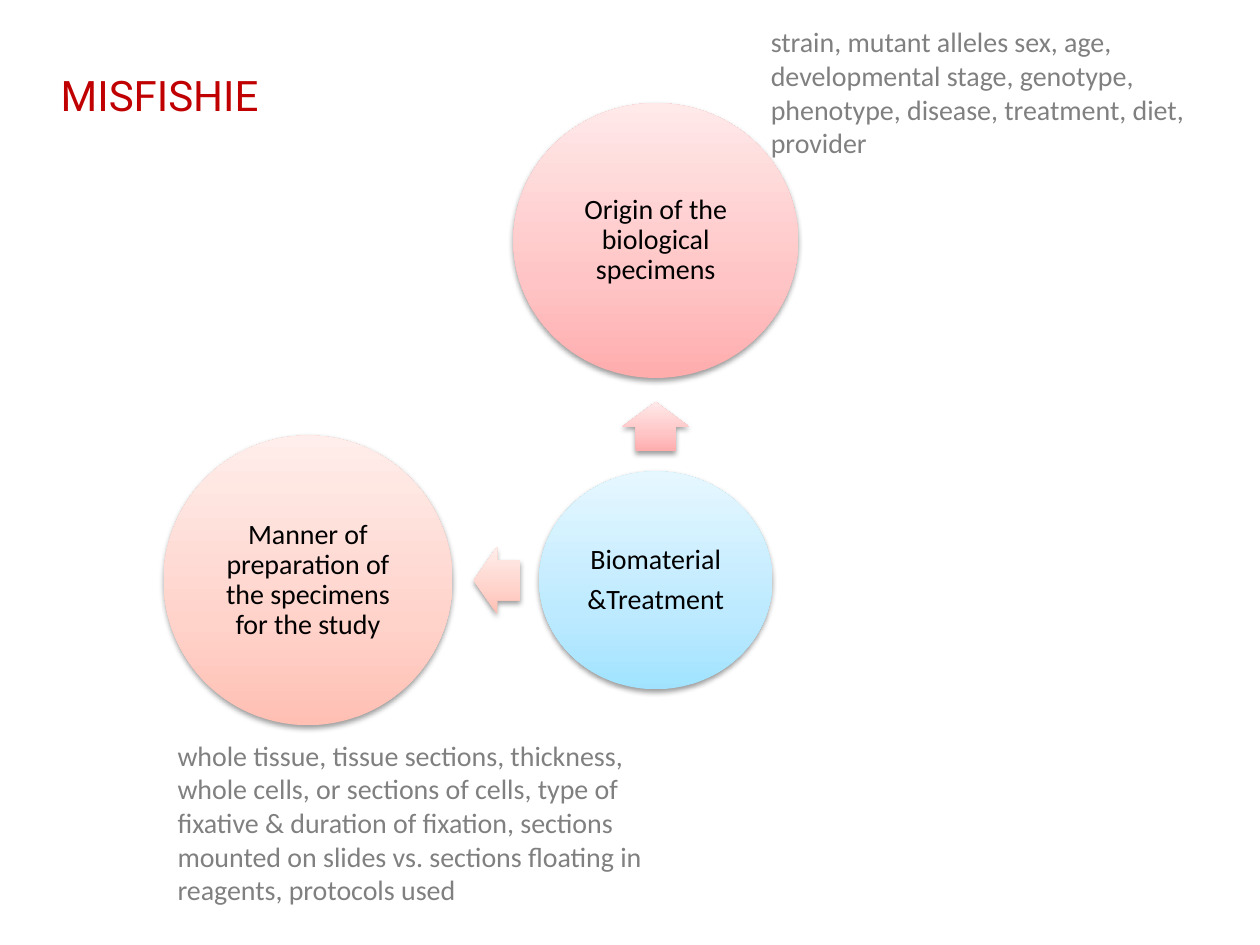
from dataclasses import dataclass

from lxml import etree
from pptx import Presentation
from pptx import util as u
from pptx.dml.color import RGBColor
from pptx.enum import shapes, text
from pptx.oxml import parse_xml
from pptx.oxml.ns import nsdecls, qn

# Gradient colours from bottom to top
BLUE = ("A1E3FF", "BDEAFF", "E6F7FF")
PINK = ("FFACAD", "FFC4C5", "FFE9E9")
PEACH = ("FFBFB3", "FFD2CA", "FFEEEB")
STOPS = (0, 35, 100)


@dataclass
class Node:
    """A circle or arrow; centre and size in centimetres."""
    kind: shapes.MSO_SHAPE
    x: float
    y: float
    width: float
    height: float
    colors: tuple[str, str, str]
    label: str = ""
    rotation: float = 0


@dataclass
class Note:
    left: float
    top: float
    height: float
    words: str


CIRCLE, ARROW = shapes.MSO_SHAPE.OVAL, shapes.MSO_SHAPE.RIGHT_ARROW
HUB_X, HUB_Y = 13.22, 11.7

NODES = [
    Node(CIRCLE, HUB_X, HUB_Y, 4.7, 4.39, BLUE, "Biomaterial\n&Treatment"),
    Node(ARROW, HUB_X, 8.6, 0.99, 1.35, PINK, rotation=270),
    Node(CIRCLE, HUB_X, 4.85, 5.74, 5.54, PINK,
         "Origin of the biological specimens"),
    Node(ARROW, 10.02, HUB_Y, 0.94, 1.35, PEACH, rotation=180),
    Node(CIRCLE, 6.21, HUB_Y, 5.82, 5.84, PEACH,
         "Manner of preparation of the specimens for the study"),
]

NOTES = [
    Note(15.29, 0.38, 3,
         "strain, mutant alleles sex, age, developmental stage, genotype,\n"
         "phenotype, disease, treatment, diet, provider"),
    Note(3.33, 14.76, 3.68,
         "whole tissue, tissue sections, thickness, whole cells, or sections "
         "of cells, type of fixative & duration of fixation, sections mounted "
         "on slides vs. sections floating in reagents, protocols used"),
]


def color(value: str) -> RGBColor:
    return RGBColor.from_string(value)


def write(frame, words: str, font: str, size: float, fill: str, align) -> None:
    frame.text = words
    frame.word_wrap = True
    for paragraph in frame.paragraphs:
        paragraph.alignment = align
        for run in paragraph.runs:
            run.font.name = font
            run.font.size = u.Pt(size)
            run.font.color.rgb = color(fill)


def style(shape, colors: tuple[str, str, str]) -> None:
    """Give a shape a vertical three-stop gradient and a soft shadow."""
    shape.line.fill.background()
    shape.fill.gradient()
    gradient = shape._element.spPr.find(qn("a:gradFill"))
    gradient.set("rotWithShape", "0")
    stop_list = gradient.find(qn("a:gsLst"))
    for stop in list(stop_list):
        stop_list.remove(stop)
    for position, value in zip(STOPS, colors):
        stop = etree.SubElement(stop_list, qn("a:gs"), pos=str(position * 1000))
        etree.SubElement(stop, qn("a:srgbClr"), val=value)
    gradient.find(qn("a:lin")).set("ang", str(270 * 60000))

    shape.shadow.inherit = False
    effects = shape._element.spPr.find(qn("a:effectLst"))
    effects.append(parse_xml(
        f'<a:outerShdw {nsdecls("a")} blurRad="{u.Pt(3.1)}" dist="{u.Pt(1.6)}" '
        'dir="5400000" rotWithShape="0"><a:srgbClr val="000000">'
        '<a:alpha val="38000"/></a:srgbClr></a:outerShdw>'))


def draw_node(group, node: Node) -> None:
    shape = group.shapes.add_shape(
        node.kind, u.Cm(node.x - node.width / 2), u.Cm(node.y - node.height / 2),
        u.Cm(node.width), u.Cm(node.height))
    shape.rotation = node.rotation
    style(shape, node.colors)
    if node.kind == ARROW:
        shape.adjustments[0] = 0.6
        shape.adjustments[1] = 0.5
    if node.label:
        frame = shape.text_frame
        write(frame, node.label, "Calibri", 16, "000000", text.PP_ALIGN.CENTER)
        frame.vertical_anchor = text.MSO_ANCHOR.MIDDLE
        frame.margin_left = frame.margin_right = u.Cm(0.05)
        frame.margin_top = frame.margin_bottom = u.Cm(0.05)
        for paragraph in frame.paragraphs:
            paragraph.line_spacing = 0.9
            paragraph.space_after = u.Pt(5.6)


def draw_note(slide, note: Note) -> None:
    box = slide.shapes.add_textbox(
        u.Cm(note.left), u.Cm(note.top), u.Cm(10.69), u.Cm(note.height))
    write(box.text_frame, note.words, "Calibri", 16, "808080", text.PP_ALIGN.LEFT)
    box.text_frame.auto_size = text.MSO_AUTO_SIZE.SHAPE_TO_FIT_TEXT


def main() -> None:
    presentation = Presentation()
    presentation.slide_width, presentation.slide_height = u.Cm(25.4), u.Cm(19.05)
    slide = presentation.slides.add_slide(presentation.slide_layouts[5])

    # Title
    title = slide.shapes.title
    title.left, title.top = u.Cm(0.97), u.Cm(1.4)
    title.width, title.height = u.Cm(20.62), u.Cm(2.06)
    frame = title.text_frame
    write(frame, "MISFISHIE", "Roboto", 24, "C00000", text.PP_ALIGN.LEFT)
    frame.vertical_anchor = text.MSO_ANCHOR.TOP
    frame.margin_top = frame.margin_bottom = 0
    frame.auto_size = text.MSO_AUTO_SIZE.NONE

    # Radial diagram
    group = slide.shapes.add_group_shape()
    for node in NODES:
        draw_node(group, node)

    # Explanations beside the circles
    for note in NOTES:
        draw_note(slide, note)

    presentation.save("out.pptx")


if __name__ == "__main__":
    main()
